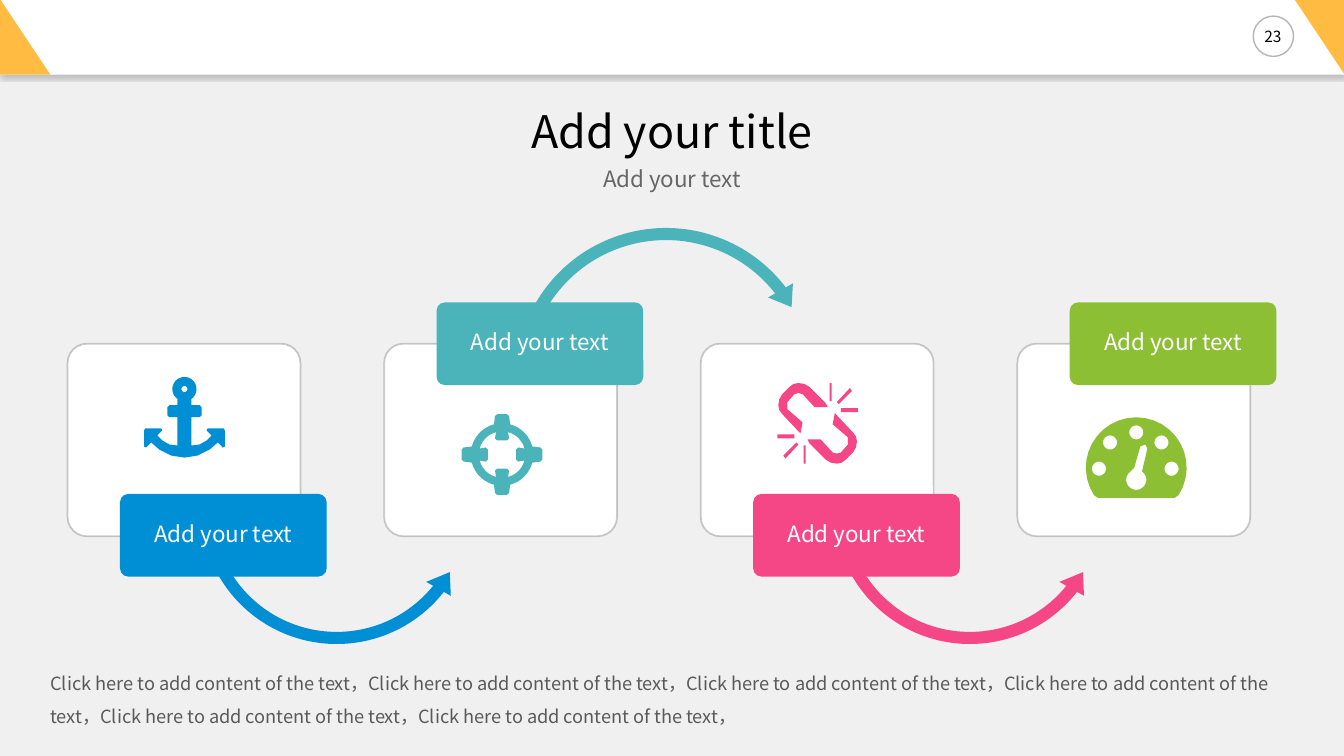
from math import cos, radians, sin

from lxml.etree import SubElement
from pptx import Presentation
from pptx.dml.color import RGBColor
from pptx.enum.shapes import MSO_SHAPE as SHAPE
from pptx.enum.text import MSO_ANCHOR as ANCHOR, PP_ALIGN as ALIGN
from pptx.oxml.ns import qn
from pptx.util import Inches, Pt

FONT = "Noto Sans CJK JP"
BLUE, TEAL, PINK, GREEN = "008FD5", "4BB4BA", "F54785", "8DBF34"
WHITE, BLACK, ORANGE = "FFFFFF", "000000", "FFBB42"
CARD_LEFT, CARD_STEP = 0.67, 3.14
HIGH_LABEL, LOW_LABEL = 3.0, 4.9
SWOOP_UP = (SHAPE.LEFT_CIRCULAR_ARROW, 1.24, 3.61, 2.86,
            (0.042, 5.327, 23.082, 90.245, 0.049))
SWOOP_DOWN = (SHAPE.CIRCULAR_ARROW, 1.22, 2.18, 3.15,
              (0.038, 4.781, 193.464, 125.755, 0.045))
STEPS = [
    (BLUE, LOW_LABEL, SWOOP_UP),
    (TEAL, HIGH_LABEL, SWOOP_DOWN),
    (PINK, LOW_LABEL, SWOOP_UP),
    (GREEN, HIGH_LABEL, None),
]


def rgb(value):
    """Turn a hex string into a colour."""
    return RGBColor.from_string(value)


def add_alpha(parent, percent):
    """Set the opacity of the colour held by an element."""
    color = parent.find(f".//{qn('a:srgbClr')}")
    SubElement(color, qn("a:alpha"), val=str(percent * 1000))


def paint(shape, fill):
    """Give a shape a flat fill with neither line nor shadow."""
    shape.shadow.inherit = False
    shape.fill.solid()
    shape.fill.fore_color.rgb = rgb(fill)
    shape.line.fill.background()
    return shape


def add_block(slide, kind, box, fill, adjust=()):
    """Add a flat preset shape."""
    block = slide.shapes.add_shape(kind, *map(Inches, box))
    for index, value in enumerate(adjust):
        block.adjustments[index] = value
    return paint(block, fill)


def outline(shape, color, width, opacity):
    """Draw a translucent line around a shape."""
    shape.line.color.rgb = rgb(color)
    shape.line.width = Pt(width)
    add_alpha(shape.line.fill._xPr, opacity)


def drop_shadow(shape):
    """Cast a soft shadow straight down."""
    effects = shape._element.spPr.find(qn("a:effectLst"))
    shadow = SubElement(effects, qn("a:outerShdw"), blurRad=str(Pt(3)),
                        dist=str(Pt(2)), dir="5400000", algn="t", rotWithShape="0")
    SubElement(shadow, qn("a:srgbClr"), val=BLACK)
    add_alpha(shadow, 20)


def write(shape, text, size, color, align=ALIGN.CENTER, anchor=ANCHOR.TOP,
          spacing=None, before=None, insets=(0, 0)):
    """Write one formatted paragraph into a shape."""
    frame = shape.text_frame
    frame.word_wrap = True
    frame.vertical_anchor = anchor
    frame.margin_left = frame.margin_right = Inches(insets[0])
    frame.margin_top = frame.margin_bottom = Inches(insets[1])
    paragraph = frame.paragraphs[0]
    paragraph.alignment = align
    paragraph.line_spacing = spacing
    paragraph.space_before = before
    run = paragraph.add_run()
    run.text = text
    run.font.size = Pt(size)
    run.font.color.rgb = rgb(color)
    run.font.name = FONT
    SubElement(run._r.get_or_add_rPr(), qn("a:ea"), typeface=FONT)


def add_text(slide, box, text, size, color, **style):
    """Add a text box."""
    write(slide.shapes.add_textbox(*map(Inches, box)), text, size, color, **style)


def arc(x, y, radius, start=0, end=360, count=24):
    """List points along an arc, in degrees clockwise from the right."""
    angles = [radians(start + (end - start) * i / count) for i in range(count + 1)]
    return [(x + radius * cos(a), y + radius * sin(a)) for a in angles]


def add_icon(slide, contours, fill):
    """Add one freeform made of closed contours."""
    rings = [[(Inches(x), Inches(y)) for x, y in ring] for ring in contours]
    builder = slide.shapes.build_freeform(*rings[0][0])
    for index, ring in enumerate(rings):
        if index:
            builder.move_to(*ring[0])
        builder.add_line_segments(ring[1:], close=True)
    paint(builder.convert_to_shape(), fill)


def anchor_icon():
    """Outline an anchor by mirroring its right half."""
    middle = 1.83
    right = arc(middle, 3.86, 0.12, -90, 55, 12) + [
        (1.9, 4.02), (1.98, 4.02), (2, 4.04), (2, 4.12), (1.98, 4.14),
        (1.9, 4.14), (1.9, 4.42), (1.98, 4.41), (2.05, 4.37), (2.1, 4.32),
        (2.05, 4.27), (2.06, 4.25), (2.22, 4.25), (2.23, 4.27), (2.23, 4.43),
        (2.21, 4.44), (2.16, 4.39), (2.08, 4.46), (1.96, 4.52), (middle, 4.54)]
    left = [(2 * middle - x, y) for x, y in reversed(right)]
    return [right + left, arc(middle, 3.86, 0.03)]


def target_ring(tip, shoulder, radius):
    """Outline a circle crossed by four rounded bars."""
    quarter = [(-0.07, -shoulder), (-0.05, -tip), (0.05, -tip), (0.07, -shoulder)]
    quarter += arc(0, 0, radius, -75, -15, 12)
    ring = []
    for _ in range(4):
        ring += [(4.98 + x, 4.51 + y) for x, y in quarter]
        quarter = [(-y, x) for x, y in quarter]
    return ring


def link_icon():
    """Outline a broken link by turning one half around the centre."""
    center_x, center_y = 8.11, 4.2
    half = [
        [(8.08, 4.04), (7.96, 3.91), (7.92, 3.9), (7.88, 3.91), (7.81, 3.99),
         (7.81, 4.06), (7.96, 4.19), (7.94, 4.3), (7.92, 4.28), (7.76, 4.11),
         (7.73, 4.07), (7.72, 4.02), (7.73, 3.96), (7.76, 3.91), (7.83, 3.84),
         (7.87, 3.81), (7.92, 3.8), (7.98, 3.81), (8.03, 3.84), (8.19, 4),
         (8.21, 4.04)],
        [(7.71, 4.31), (7.88, 4.31), (7.88, 4.35), (7.71, 4.35)],
        [(7.77, 4.52), (7.9, 4.39), (7.92, 4.41), (7.79, 4.55)],
        [(7.97, 4.42), (7.99, 4.42), (7.99, 4.6), (7.97, 4.6)],
    ]
    return half + [[(2 * center_x - x, 2 * center_y - y) for x, y in ring]
                   for ring in half]


def gauge_icon():
    """Outline a gauge with five dots and a needle cut out."""
    dial = arc(11.27, 4.64, 0.5, 147, 393) + [(11.65, 4.94), (10.89, 4.94)]
    dots = [(10.9, 4.65), (11.01, 4.39), (11.27, 4.29), (11.52, 4.39), (11.62, 4.65)]
    needle = [(11.38, 4.45), (11.36, 4.41), (11.31, 4.43), (11.25, 4.64)]
    needle += arc(11.27, 4.76, 0.1, 235, -55)
    return [dial, needle] + [arc(x, y, 0.07) for x, y in dots]


def add_header(slide):
    """Add the top band with its corners and page number."""
    drop_shadow(add_block(slide, SHAPE.RECTANGLE, (0, -0.01, 13.33, 0.75), WHITE))
    badge = add_block(slide, SHAPE.OVAL, (12.43, 0.16, 0.4, 0.4), WHITE)
    outline(badge, "0D0D0D", 1, 30)
    add_block(slide, SHAPE.RIGHT_TRIANGLE, (0, -0.01, 0.5, 0.75), ORANGE)
    corner = add_block(slide, SHAPE.RIGHT_TRIANGLE, (12.83, -0.02, 0.5, 0.75), ORANGE)
    corner.rotation = 180
    add_text(slide, (12.43, 0.16, 0.39, 0.4), "23", 11, BLACK,
             anchor=ANCHOR.MIDDLE, insets=(0.05, 0.05))


def add_step(slide, left, color, label_top, swoop):
    """Add a card, its arrow to the next card and its label."""
    card = add_block(slide, SHAPE.ROUNDED_RECTANGLE, (left, 3.41, 2.31, 1.91),
                     WHITE, [0.1])
    outline(card, BLACK, 1.25, 20)
    if swoop:
        kind, offset, top, size, adjust = swoop
        add_block(slide, kind, (left + offset, top, size, size), color, adjust)
    label = add_block(slide, SHAPE.ROUNDED_RECTANGLE,
                      (left + 0.52, label_top, 2.05, 0.82), color, [0.1])
    write(label, "Add your text", 16, WHITE, anchor=ANCHOR.MIDDLE,
          spacing=0.9, insets=(0.06, 0.05))


def main():
    """Build and save the slide."""
    deck = Presentation()
    deck.slide_width, deck.slide_height = Inches(13.33), Inches(7.5)
    slide = deck.slides.add_slide(deck.slide_layouts[6])
    slide.background.fill.solid()
    slide.background.fill.fore_color.rgb = rgb("F0F0F0")
    add_header(slide)
    add_text(slide, (0.5, 6.56, 12.33, 0.73),
             "Click here to add content of the text，" * 6, 13, "595959",
             align=ALIGN.LEFT, spacing=1.5, before=Pt(10))
    add_text(slide, (0.5, 1.09, 12.33, 0.54), "Add your title", 32, BLACK, spacing=0.9)
    add_text(slide, (0.5, 1.67, 12.33, 0.27), "Add your text", 16, "666666", spacing=0.9)
    for index, step in enumerate(STEPS):
        add_step(slide, CARD_LEFT + index * CARD_STEP, *step)
    add_icon(slide, anchor_icon(), BLUE)
    add_icon(slide, link_icon(), PINK)
    add_icon(slide, [target_ring(0.4, 0.38, 0.31), target_ring(0.14, 0.16, 0.23)], TEAL)
    add_icon(slide, gauge_icon(), GREEN)
    deck.save("out.pptx")


if __name__ == "__main__":
    main()
